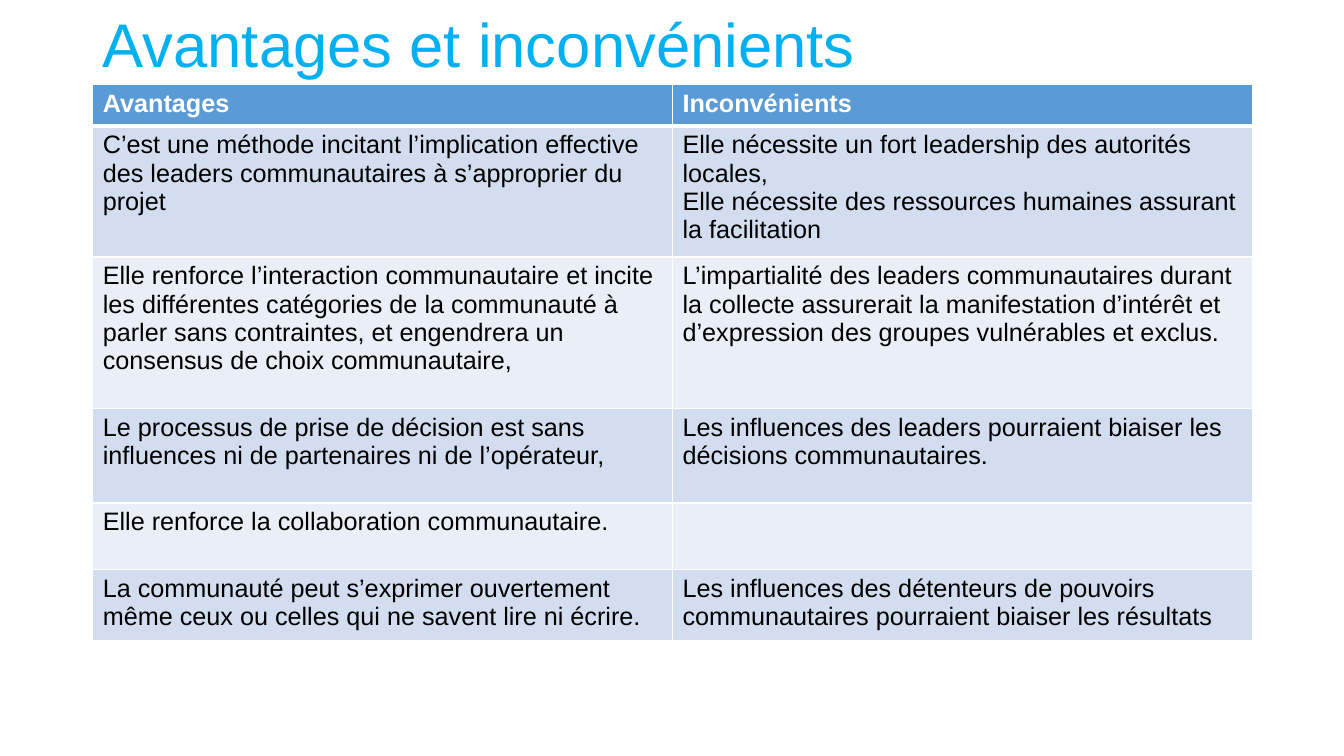
from lxml import etree
from pptx import Presentation
from pptx.dml.color import RGBColor
from pptx.enum.text import MSO_ANCHOR
from pptx.oxml.ns import qn
from pptx.util import Inches, Pt

MIDDLE = MSO_ANCHOR.MIDDLE

COLORS = {
    "title": "00B0F0",
    "header": "5B9BD5",
    "band_dark": "D2DEEF",
    "band_light": "EAEFF7",
    "white": "FFFFFF",
    "black": "000000",
}

LEFT, WIDTH = 0.92, 11.5
ROW_HEIGHTS = [0.41, 1.22, 1.5, 0.94, 0.66, 0.66]

# Each row pairs an advantage with a drawback
COMPARISON = [
    ("Avantages", "Inconvénients"),
    ("C’est une méthode incitant l’implication effective des leaders "
     "communautaires à s’approprier du projet",
     "Elle nécessite un fort leadership des autorités locales,\n"
     "Elle nécessite des ressources humaines assurant la facilitation"),
    ("Elle renforce l’interaction communautaire et incite les différentes "
     "catégories de la communauté à parler sans contraintes, et engendrera "
     "un consensus de choix communautaire,",
     "L’impartialité des leaders communautaires durant la collecte assurerait "
     "la manifestation d’intérêt et d’expression des groupes vulnérables et exclus."),
    ("Le processus de prise de décision est sans influences ni de partenaires "
     "ni de l’opérateur,",
     "Les influences des leaders pourraient biaiser les décisions communautaires."),
    ("Elle renforce la collaboration communautaire.", ""),
    ("La communauté peut s’exprimer ouvertement même ceux ou celles qui ne "
     "savent lire ni écrire.",
     "Les influences des détenteurs de pouvoirs communautaires pourraient "
     "biaiser les résultats"),
]


class SlideBuilder:
    font_name = "Arial"

    def __init__(self, slide):
        self.slide = slide

    def style(self, paragraph, size, color, bold=False):
        font = paragraph.font
        font.name, font.size, font.bold = self.font_name, Pt(size), bold
        font.color.rgb = RGBColor.from_string(COLORS[color])

    def title(self, text, top, height):
        box = self.slide.shapes.add_textbox(
            Inches(LEFT), Inches(top), Inches(WIDTH), Inches(height))
        frame = box.text_frame
        frame.word_wrap = True
        frame.vertical_anchor = MIDDLE
        frame.text = text
        frame.paragraphs[0].line_spacing = 0.9
        self.style(frame.paragraphs[0], 44, "title")

    def border(self, cell, side, width):
        line = etree.SubElement(cell._tc.get_or_add_tcPr(), qn(f"a:ln{side}"),
                                w=str(Pt(width)))
        fill = etree.SubElement(line, qn("a:solidFill"))
        etree.SubElement(fill, qn("a:srgbClr"), val=COLORS["white"])

    def cell(self, cell, text, row):
        # The rule under the header is thicker than the others
        widths = {"L": 1, "R": 1, "T": 3 if row == 1 else 1, "B": 3 if row == 0 else 1}
        for side, width in widths.items():
            self.border(cell, side, width)
        band = "header" if row == 0 else "band_dark" if row % 2 else "band_light"
        cell.fill.solid()
        cell.fill.fore_color.rgb = RGBColor.from_string(COLORS[band])
        cell.text = text
        for paragraph in cell.text_frame.paragraphs:
            self.style(paragraph, 18, "black" if row else "white", bold=row == 0)

    def table(self, rows, heights, top):
        table = self.slide.shapes.add_table(
            len(rows), len(rows[0]), Inches(LEFT), Inches(top),
            Inches(WIDTH), Inches(sum(heights))).table
        for index, (texts, height) in enumerate(zip(rows, heights)):
            table.rows[index].height = Inches(height)
            for column, text in enumerate(texts):
                self.cell(table.cell(index, column), text, index)


def main():
    presentation = Presentation()
    presentation.slide_width = Inches(13.33)
    presentation.slide_height = Inches(7.5)
    builder = SlideBuilder(presentation.slides.add_slide(presentation.slide_layouts[6]))

    # Title
    builder.title("Avantages et inconvénients", top=-0.25, height=1.45)

    # Comparison table
    builder.table(COMPARISON, ROW_HEIGHTS, top=0.84)

    presentation.save("out.pptx")


if __name__ == "__main__":
    main()
